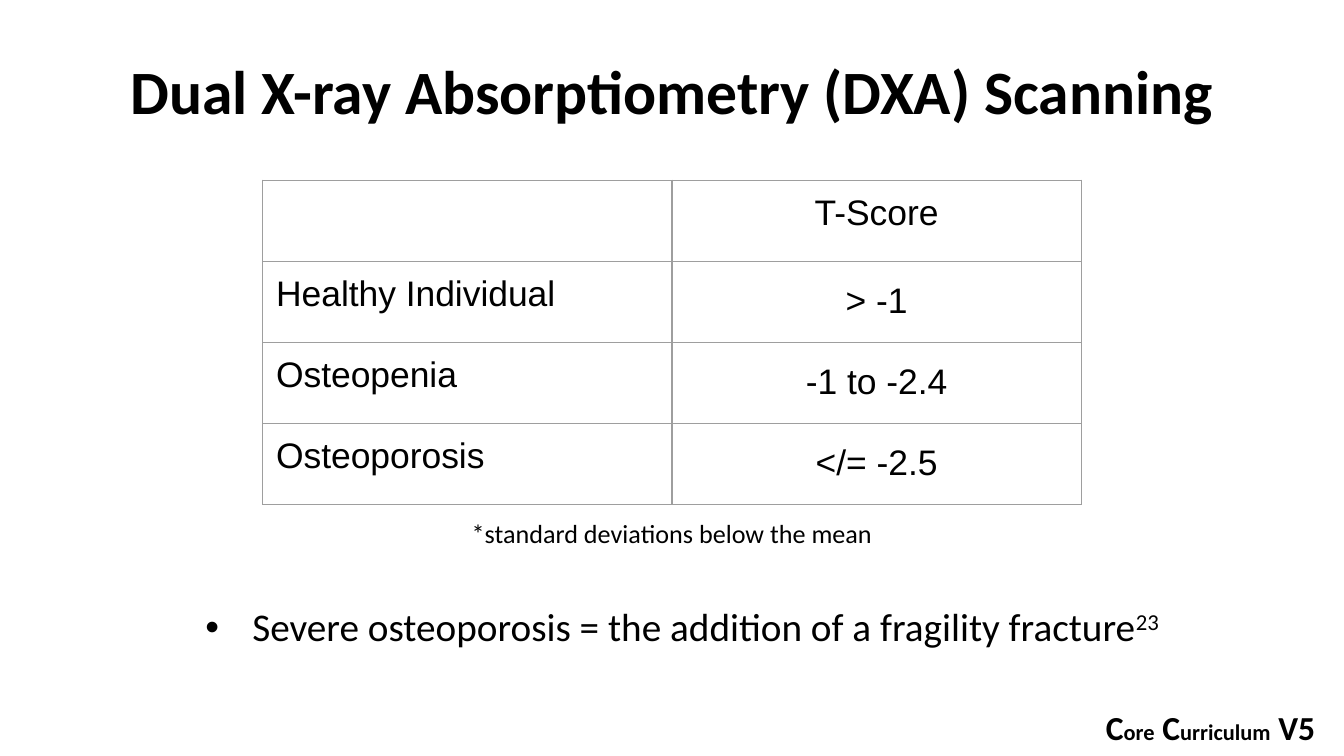
from lxml import etree
from pptx import Presentation
from pptx.dml.color import RGBColor
from pptx.enum import text
from pptx.oxml import ns
from pptx.util import Pt

# Content
TITLE = [("Dual X-ray Absorptiometry (DXA) Scanning", 33)]
ROWS = [
    ("", "T-Score"),
    ("Healthy Individual", "> -1"),
    ("Osteopenia", "-1 to -2.4"),
    ("Osteoporosis", "</= -2.5"),
]
NOTE = [("*standard deviations below the mean", 14)]
BULLET = [("Severe osteoporosis = the addition of a fragility fracture", 21)]
CITATION = "23"
FOOTER = [("C", 18), ("ore", 12), (" C", 18), ("urriculum", 12), (" V5", 18)]

# Layout in points
SLIDE_W, SLIDE_H = 720, 405
MARGIN, BODY_W = 49.5, 621
TABLE_TOP, COL_W, ROW_H = 96.5, 219.3, 43.4
CELL_PAD = 7.2
BLACK, GREY = "000000", "9E9E9E"
CENTER, MIDDLE = text.PP_ALIGN.CENTER, text.MSO_ANCHOR.MIDDLE


def rgb(value):
    return RGBColor.from_string(value)


def apply(obj, values):
    for name, value in values.items():
        setattr(obj, name, value)


def add_runs(p, runs, font="Calibri", bold=False):
    for words, size in runs:
        r = p.add_run()
        r.text = words
        apply(r.font, {"name": font, "size": Pt(size), "bold": bold})
        r.font.color.rgb = rgb(BLACK)
    return p


def add_box(s, left, top, width, height, **frame):
    tf = s.shapes.add_textbox(Pt(left), Pt(top), Pt(width), Pt(height)).text_frame
    apply(tf, {"word_wrap": True, "margin_left": Pt(5), "margin_right": Pt(5),
               "margin_top": Pt(2.7), "margin_bottom": Pt(2.7), **frame})
    return tf


def add_bullet(p, left, hanging):
    pPr = p._p.get_or_add_pPr()
    pPr.set("marL", str(Pt(left)))
    pPr.set("indent", str(-Pt(hanging)))
    color = etree.SubElement(pPr, ns.qn("a:buClr"))
    etree.SubElement(color, ns.qn("a:srgbClr"), val=BLACK)
    etree.SubElement(pPr, ns.qn("a:buFont"), typeface="Arial")
    etree.SubElement(pPr, ns.qn("a:buChar"), char="•")


def add_borders(cell):
    tcPr = cell._tc.get_or_add_tcPr()
    for side in "LRTB":
        line = etree.SubElement(tcPr, ns.qn(f"a:ln{side}"), w=str(Pt(0.75)))
        fill = etree.SubElement(line, ns.qn("a:solidFill"))
        etree.SubElement(fill, ns.qn("a:srgbClr"), val=GREY)


prs = Presentation()
apply(prs, {"slide_width": Pt(SLIDE_W), "slide_height": Pt(SLIDE_H)})
s = prs.slides.add_slide(prs.slide_layouts[6])

# Footer
tf = add_box(s, 587.5, 375.8, 127, 27.4)
add_runs(tf.paragraphs[0], FOOTER, bold=True)

# Title
tf = add_box(s, MARGIN, 11.5, BODY_W, 78.5, vertical_anchor=MIDDLE)
p = add_runs(tf.paragraphs[0], TITLE, bold=True)
apply(p, {"alignment": CENTER, "line_spacing": 0.9})

# Note and bullet under the table
tf = add_box(s, MARGIN, 276.5, BODY_W, 95)
p = add_runs(tf.paragraphs[0], NOTE)
apply(p, {"alignment": CENTER, "line_spacing": 0.9})
p = tf.add_paragraph()
add_bullet(p, 36, 25.2)
add_runs(p, BULLET + [(CITATION, 21)])
apply(p, {"alignment": CENTER, "line_spacing": 0.9, "space_before": Pt(31.4)})
p.runs[-1]._r.get_or_add_rPr().set("baseline", "30000")

# T-score table, centred on the slide
cols = len(ROWS[0])
table_w = cols * COL_W
table = s.shapes.add_table(len(ROWS), cols, Pt((SLIDE_W - table_w) / 2), Pt(TABLE_TOP),
                           Pt(table_w), Pt(len(ROWS) * ROW_H)).table
apply(table, {"first_row": False, "horz_banding": False})
for col in table.columns:
    col.width = Pt(COL_W)
for i, row in enumerate(ROWS):
    table.rows[i].height = Pt(ROW_H)
    for j, words in enumerate(row):
        cell = table.cell(i, j)
        apply(cell, {f"margin_{side}": Pt(CELL_PAD)
                     for side in ("left", "right", "top", "bottom")})
        add_borders(cell)
        cell.fill.background()
        p = cell.text_frame.paragraphs[0]
        if words:
            add_runs(p, [(words, 19)], font="Arial")
        if j:
            p.alignment = CENTER
            if i:
                cell.vertical_anchor = MIDDLE

prs.save("out.pptx")
